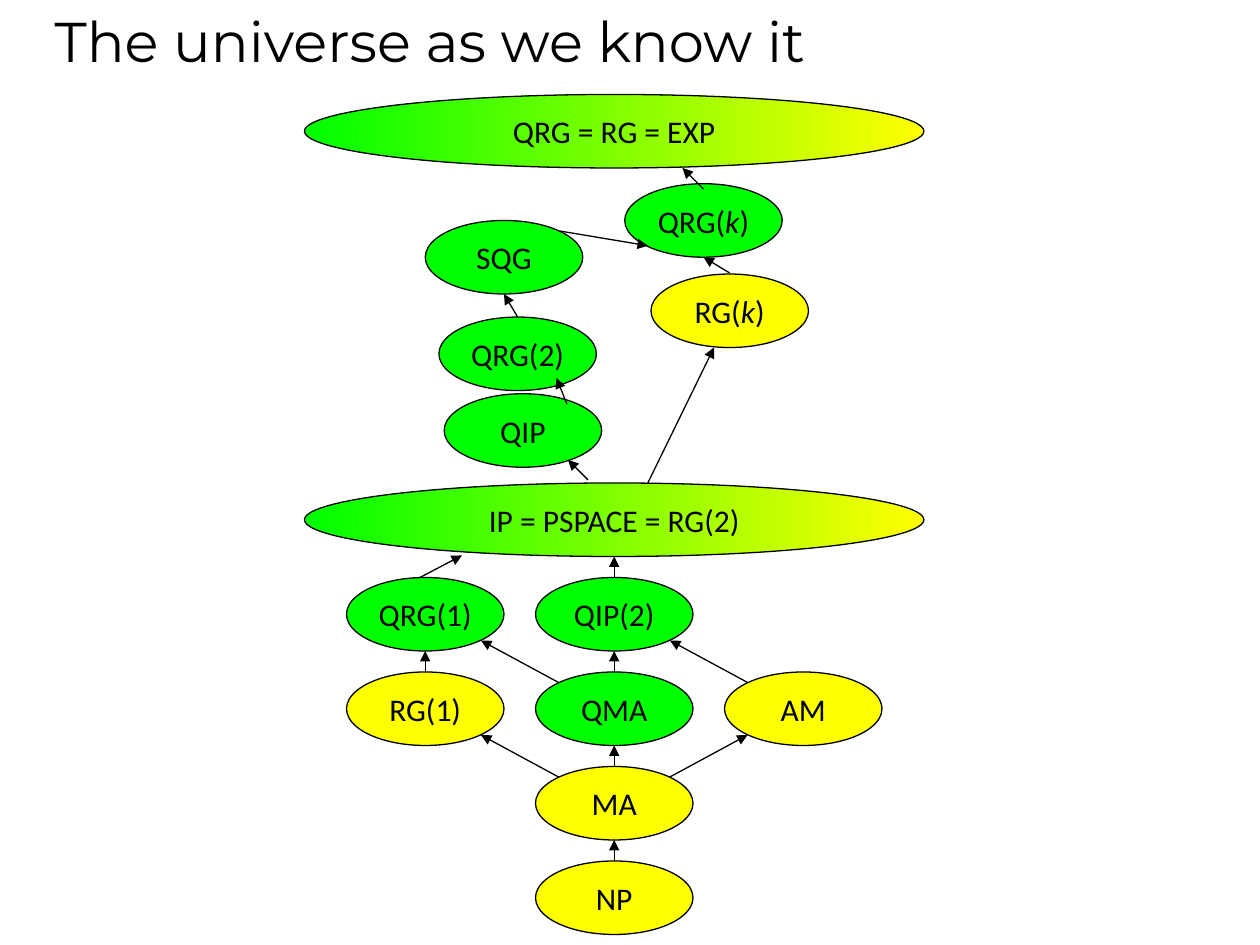
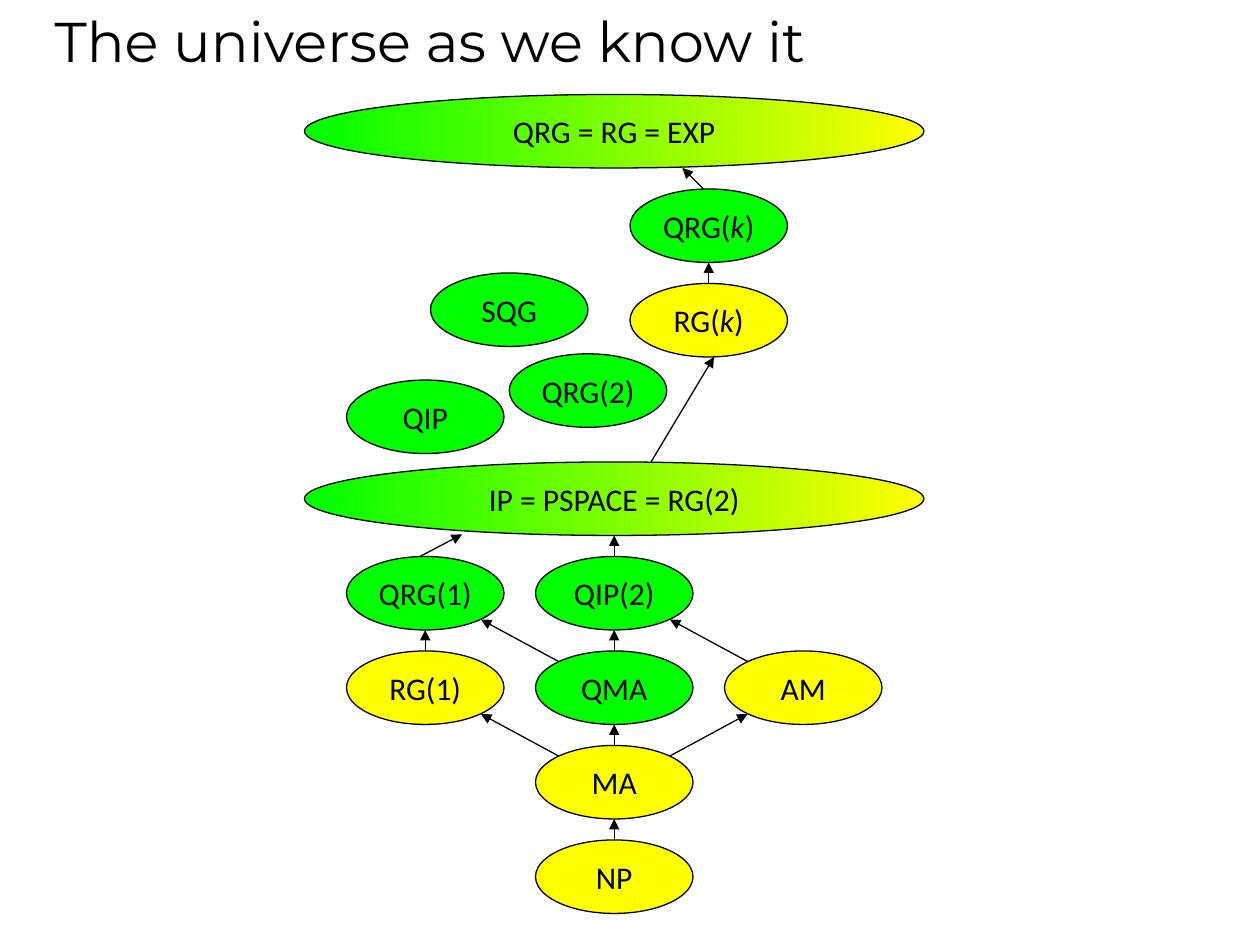
from lxml import etree
from pptx import Presentation
from pptx.dml.color import RGBColor
from pptx.enum.shapes import MSO_CONNECTOR, MSO_SHAPE
from pptx.enum.text import MSO_ANCHOR, MSO_AUTO_SIZE, PP_ALIGN
from pptx.oxml.ns import qn
from pptx.util import Pt

ELLIPSE = MSO_SHAPE.OVAL
STRAIGHT = MSO_CONNECTOR.STRAIGHT
TOP, MIDDLE = MSO_ANCHOR.TOP, MSO_ANCHOR.MIDDLE
LEFT, CENTER = PP_ALIGN.LEFT, PP_ALIGN.CENTER
NO_AUTOFIT = MSO_AUTO_SIZE.NONE

PX = 7620
color = RGBColor.from_string
BLACK, GREEN, YELLOW = "000000", "00FF00", "FFFF00"
QUANTUM, CLASSICAL, BOTH = [GREEN], [YELLOW], [GREEN, YELLOW]
NODE_WIDTH, WIDE_WIDTH, NODE_HEIGHT = 150, 590, 70
ROW_PITCH, ROW_GAP = 90, 20
WIDE_LEFT, TOP_CLASS_Y = 290, 90
LEFT_COLUMN, MIDDLE_COLUMN, RIGHT_COLUMN = 330, 510, 690

LOWER_CLASSES = [
    ("QIP(2)", MIDDLE_COLUMN, 1, QUANTUM),
    ("QMA", MIDDLE_COLUMN, 2, QUANTUM),
    ("AM", RIGHT_COLUMN, 2, CLASSICAL),
    ("MA", MIDDLE_COLUMN, 3, CLASSICAL),
    ("NP", MIDDLE_COLUMN, 4, CLASSICAL),
    ("RG(1)", LEFT_COLUMN, 2, CLASSICAL),
    ("QRG(1)", LEFT_COLUMN, 1, QUANTUM),
]
VERTICAL_ARROWS = [(MIDDLE_COLUMN, row) for row in (4, 3, 2, 1)] + [(LEFT_COLUMN, 2)]
DIAGONAL_ARROWS = [
    (638, 280, 712, 240),
    (532, 280, 458, 240),
    (712, 190, 638, 150),
    (532, 190, 458, 150),
    (400, 90, 440, 69),
]

SLIDES = [
    {
        "pspace_y": 460,
        "classes": [
            ("QRG(2)", 418, 302, QUANTUM),
            ("SQG", 405, 210, QUANTUM),
            ("RG(k)", 620, 261, CLASSICAL),
            ("QRG(k)", 595, 175, QUANTUM),
            ("QIP", 423, 375, QUANTUM),
        ],
        "arrows": [
            (493, 302, 480, 280),
            (533, 220, 617, 234),
            (617, 460, 680, 331),
            (695, 260, 670, 245),
            (560, 457, 541, 438),
            (670, 180, 650, 160),
            (540, 385, 530, 360),
        ],
    },
    {
        "pspace_y": 440,
        "classes": [
            ("SQG", 410, 260, QUANTUM),
            ("RG(k)", 600, 270, CLASSICAL),
            ("QRG(k)", 600, 180, QUANTUM),
            ("QIP", 330, 362, QUANTUM),
            ("QRG(2)", 485, 337, QUANTUM),
        ],
        "arrows": [
            (620, 440, 680, 340),
            (675, 270, 675, 250),
            (670, 180, 650, 160),
        ],
    },
]


def add_class(page, label, left, top, colors, width=NODE_WIDTH):
    node = page.shapes.add_shape(ELLIPSE, left * PX, top * PX, width * PX, NODE_HEIGHT * PX)
    node.shadow.inherit = False
    if len(colors) == 1:
        node.fill.solid()
        node.fill.fore_color.rgb = color(colors[0])
    else:
        node.fill.gradient()
        node.fill.gradient_angle = 0
        for position, (stop, value) in enumerate(zip(node.fill.gradient_stops, colors)):
            stop.position = position
            stop.color.rgb = color(value)
    node.line.color.rgb = color(BLACK)
    node.line.width = Pt(0.75)
    node.text_frame.word_wrap = False
    node.text_frame.vertical_anchor = MIDDLE
    para = node.text_frame.paragraphs[0]
    para.alignment = CENTER
    para.font.name = "Calibri"
    para.font.size = Pt(18)
    para.font.color.rgb = color(BLACK)
    before, variable, after = label.partition("k")
    for text in filter(None, (before, variable, after)):
        span = para.add_run()
        span.text = text
        if text == "k":
            span.font.italic = True


def add_arrow(page, start_x, start_y, end_x, end_y):
    arrow = page.shapes.add_connector(
        STRAIGHT, start_x * PX, start_y * PX, end_x * PX, end_y * PX
    )
    arrow.line.color.rgb = color(BLACK)
    arrow.line.width = Pt(0.75)
    properties = arrow._element.spPr
    etree.SubElement(properties.find(qn("a:ln")), qn("a:tailEnd"), type="triangle")
    etree.SubElement(properties, qn("a:effectLst"))


deck = Presentation()
deck.slide_width = 1200 * PX
deck.slide_height = 900 * PX

for content in SLIDES:
    page = deck.slides.add_slide(deck.slide_layouts[5])
    title = page.shapes.title
    title.left, title.top, title.width, title.height = 40 * PX, 0, 1130 * PX, 140 * PX
    title.text_frame.text = "The universe as we know it"
    title.text_frame.vertical_anchor = TOP
    title.text_frame.auto_size = NO_AUTOFIT
    title.text_frame.word_wrap = True
    para = title.text_frame.paragraphs[0]
    para.alignment = LEFT
    para.font.name = "Montserrat"
    para.font.size = Pt(32)
    para.font.color.rgb = color(BLACK)

    pspace_y = content["pspace_y"]
    add_class(page, "IP = PSPACE = RG(2)", WIDE_LEFT, pspace_y, BOTH, WIDE_WIDTH)
    for label, left, row, colors in LOWER_CLASSES:
        add_class(page, label, left, pspace_y + row * ROW_PITCH, colors)
    for left, row in VERTICAL_ARROWS:
        center = left + NODE_WIDTH // 2
        start_y = pspace_y + row * ROW_PITCH
        add_arrow(page, center, start_y, center, start_y - ROW_GAP)
    for start_x, start_y, end_x, end_y in DIAGONAL_ARROWS:
        add_arrow(page, start_x, pspace_y + start_y, end_x, pspace_y + end_y)

    add_class(page, "QRG = RG = EXP", WIDE_LEFT, TOP_CLASS_Y, BOTH, WIDE_WIDTH)
    for label, left, top, colors in content["classes"]:
        add_class(page, label, left, top, colors)
    for ends in content["arrows"]:
        add_arrow(page, *ends)

deck.save("out.pptx")
